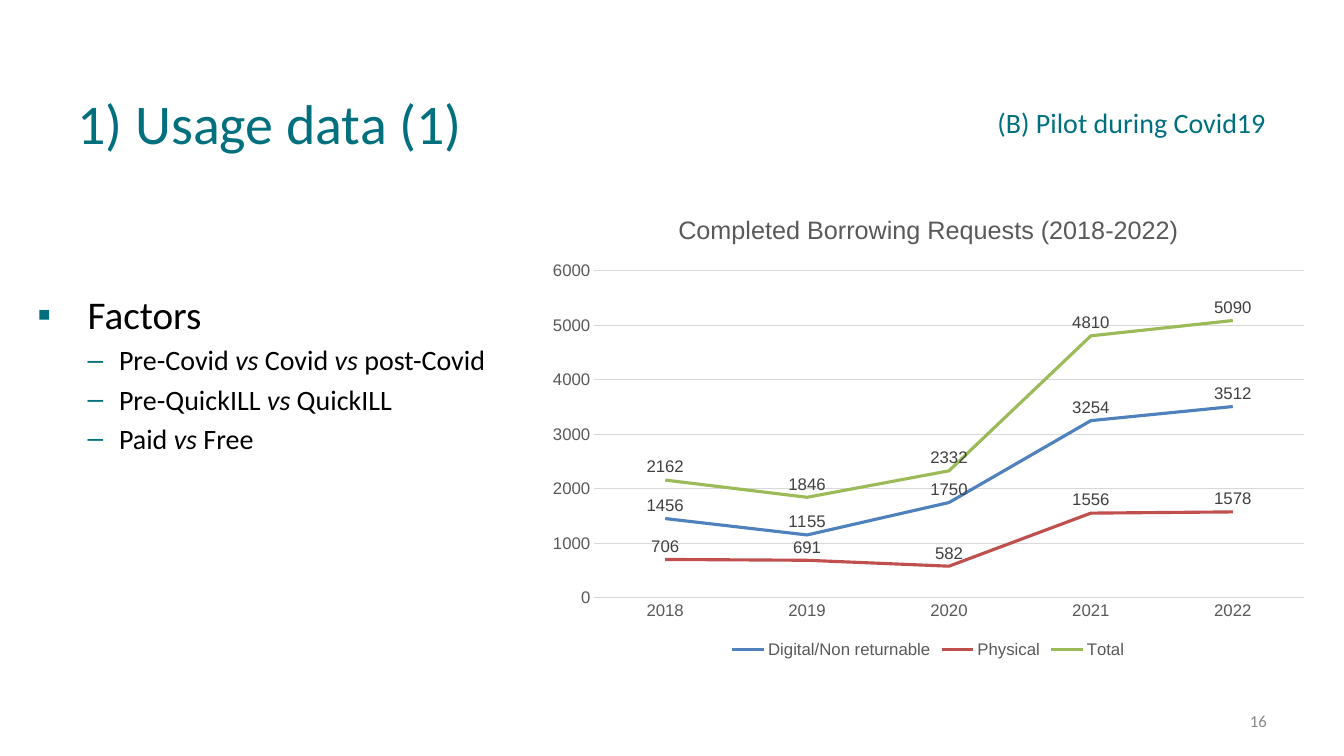
from dataclasses import dataclass

from lxml import etree
from pptx import Presentation
from pptx.chart.data import CategoryChartData
from pptx.dml.color import RGBColor
from pptx.enum.chart import XL_CHART_TYPE, XL_LABEL_POSITION, XL_LEGEND_POSITION, XL_TICK_MARK
from pptx.enum.text import MSO_ANCHOR, MSO_AUTO_SIZE, PP_ALIGN
from pptx.oxml.ns import qn
from pptx.util import Cm, Pt

LINE = XL_CHART_TYPE.LINE
ABOVE = XL_LABEL_POSITION.ABOVE
BOTTOM = XL_LEGEND_POSITION.BOTTOM
NO_TICK = XL_TICK_MARK.NONE
TOP, MIDDLE = MSO_ANCHOR.TOP, MSO_ANCHOR.MIDDLE
LEFT, RIGHT = PP_ALIGN.LEFT, PP_ALIGN.RIGHT
NO_FIT = MSO_AUTO_SIZE.NONE


@dataclass(frozen=True)
class Theme:
    font: str = "Calibri"
    chart_font: str = "Arial"
    teal: str = "00707F"
    black: str = "000000"
    page_grey: str = "888888"
    axis_grey: str = "595959"
    label_grey: str = "404040"
    grid: str = "D9D9D9"
    title_size: int = 40
    head_size: int = 28
    body_size: int = 20
    chart_title_size: int = 18
    small_size: int = 12


@dataclass(frozen=True)
class Box:
    left: float
    top: float
    width: float
    height: float

    def lengths(self):
        return Cm(self.left), Cm(self.top), Cm(self.width), Cm(self.height)


@dataclass(frozen=True)
class Bullet:
    char: str
    indent: float
    hanging: float
    size: int
    before: int


@dataclass(frozen=True)
class Series:
    name: str
    values: tuple
    color: str


THEME = Theme()
HEAD = Bullet("▪", 1.27, 1.27, THEME.head_size, 0)
SUB = Bullet("–", 2.06, 0.79, THEME.body_size, 4)

# Each factor is a list of words, with "vs" set in italics between them
FACTORS = [
    (HEAD, ["Factors"]),
    (SUB, ["Pre-Covid", "Covid", "post-Covid"]),
    (SUB, ["Pre-QuickILL", "QuickILL"]),
    (SUB, ["Paid", "Free"]),
]
YEARS = ["2018", "2019", "2020", "2021", "2022"]
REQUESTS = [
    Series("Digital/Non returnable", (1456, 1155, 1750, 3254, 3512), "4F81BD"),
    Series("Physical", (706, 691, 582, 1556, 1578), "C0504D"),
    Series("Total", (2162, 1846, 2332, 4810, 5090), "9BBB59"),
]


def style_font(font, *, size: int, color: str, name: str = THEME.font, italic: bool = False) -> None:
    font.name, font.size, font.italic, font.bold = name, Pt(size), italic, False
    font.color.rgb = RGBColor.from_string(color)


def add_run(p, text: str, **fmt) -> None:
    r = p.add_run()
    r.text = text
    style_font(r.font, **fmt)


def set_frame(tf, anchor) -> None:
    tf.word_wrap = True
    tf.auto_size = NO_FIT
    tf.vertical_anchor = anchor


def add_text(s, box: Box, text: str, *, align=LEFT, sp=None, **fmt) -> None:
    """Write one line of text in a new box or in the given placeholder."""
    if sp is None:
        sp = s.shapes.add_textbox(*box.lengths())
    else:
        sp.left, sp.top, sp.width, sp.height = box.lengths()
    set_frame(sp.text_frame, MIDDLE)
    p = sp.text_frame.paragraphs[0]
    p.alignment = align
    add_run(p, text, **fmt)


def set_bullet(p, bullet: Bullet) -> None:
    pPr = p._p.get_or_add_pPr()
    pPr.set("marL", str(Cm(bullet.indent)))
    pPr.set("indent", str(-Cm(bullet.hanging)))
    color = etree.SubElement(pPr, qn("a:buClr"))
    etree.SubElement(color, qn("a:srgbClr"), val=THEME.teal)
    etree.SubElement(pPr, qn("a:buFont"), typeface=THEME.chart_font)
    etree.SubElement(pPr, qn("a:buChar"), char=bullet.char)
    p.space_before = Pt(bullet.before)


def add_factors(s, box: Box) -> None:
    tf = s.shapes.add_textbox(*box.lengths()).text_frame
    set_frame(tf, TOP)
    for i, (bullet, words) in enumerate(FACTORS):
        p = tf.add_paragraph() if i else tf.paragraphs[0]
        p.level = int(bullet is SUB)
        set_bullet(p, bullet)
        fmt = dict(size=bullet.size, color=THEME.black)
        for j, word in enumerate(words):
            if j:
                add_run(p, "vs", italic=True, **fmt)
            lead = " " if j else ""
            tail = " " if j < len(words) - 1 else ""
            add_run(p, lead + word + tail, **fmt)


def set_line(line, color: str, width: float) -> None:
    line.color.rgb = RGBColor.from_string(color)
    line.width = Pt(width)


def add_requests_chart(s, box: Box) -> None:
    data = CategoryChartData()
    data.categories = YEARS
    for item in REQUESTS:
        data.add_series(item.name, item.values)
    chart = s.shapes.add_chart(LINE, *box.lengths(), data).chart
    small = dict(name=THEME.chart_font, size=THEME.small_size)
    style_font(chart.font, color=THEME.axis_grey, **small)

    # Title and legend
    chart.has_title = True
    chart.chart_title.include_in_layout = False
    add_run(chart.chart_title.text_frame.paragraphs[0], "Completed Borrowing Requests (2018-2022)",
            name=THEME.chart_font, size=THEME.chart_title_size, color=THEME.axis_grey)
    chart.has_legend = True
    chart.legend.position = BOTTOM
    chart.legend.include_in_layout = False
    style_font(chart.legend.font, color=THEME.axis_grey, **small)

    # Axes
    years, counts = chart.category_axis, chart.value_axis
    for axis in (years, counts):
        axis.major_tick_mark = axis.minor_tick_mark = NO_TICK
        style_font(axis.tick_labels.font, color=THEME.axis_grey, **small)
    set_line(years.format.line, THEME.grid, 0.75)
    counts.format.line.fill.background()
    counts.minimum_scale, counts.maximum_scale, counts.major_unit = 0, 6000, 1000
    set_line(counts.major_gridlines.format.line, THEME.grid, 0.75)

    # Lines and value labels
    plot = chart.plots[0]
    plot.vary_by_categories = False
    for series, item in zip(plot.series, REQUESTS):
        series.smooth = False
        set_line(series.format.line, item.color, 2.25)
        labels = series.data_labels
        labels.show_value = True
        labels.position = ABOVE
        style_font(labels.font, color=THEME.label_grey, **small)


def main() -> None:
    prs = Presentation()
    prs.slide_width, prs.slide_height = Cm(33.87), Cm(19.05)
    s = prs.slides.add_slide(prs.slide_layouts.get_by_name("Title Only"))

    # Heading, section and page number
    add_text(s, Box(1.7, 2.21, 21.29, 1.73), "1) Usage data (1)",
             sp=s.shapes.title, size=THEME.title_size, color=THEME.teal)
    add_text(s, Box(22.96, 2.21, 9.19, 1.73), "(B) Pilot during Covid19",
             align=RIGHT, size=THEME.body_size, color=THEME.teal)
    add_text(s, Box(24.28, 17.65, 7.9, 1.02), "16",
             align=RIGHT, size=THEME.small_size, color=THEME.page_grey)

    # Factors beside the chart
    add_factors(s, Box(0.69, 7.19, 11.89, 7.21))
    add_requests_chart(s, Box(13.54, 4.9, 19.71, 11.79))
    prs.save("out.pptx")


if __name__ == "__main__":
    main()
